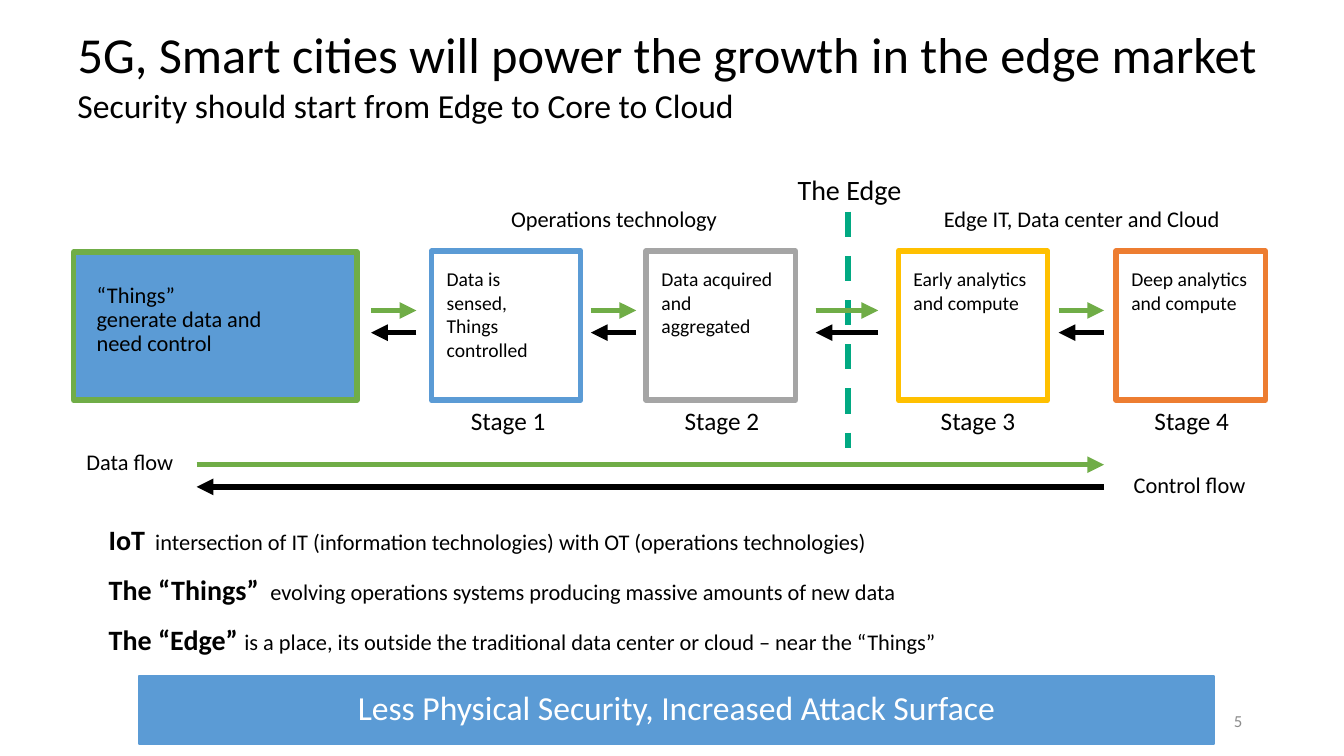
import pptx
import pptx.dml.color
import pptx.enum.dml
import pptx.enum.shapes
import pptx.enum.text
import pptx.oxml.ns
import pptx.util
import lxml.etree

PX = 9144
COLORS = {
    "text": "000000", "white": "FFFFFF", "muted": "8C8C8C", "blue": "5B9BD5",
    "green": "70AD47", "gray": "A5A5A5", "yellow": "FFC000", "orange": "ED7D31",
    "edge": "01A982",
}
ALIGN = pptx.enum.text.PP_ALIGN
ANCHOR = pptx.enum.text.MSO_ANCHOR


def px(*values):
    return [pptx.util.Emu(v * PX) for v in values]


def rgb(name):
    return pptx.dml.color.RGBColor.from_string(COLORS[name])


class Deck:
    font = "Calibri"

    def __init__(self, width, height):
        self.prs = pptx.Presentation()
        self.prs.slide_width, self.prs.slide_height = px(width, height)
        self.s = self.prs.slides.add_slide(self.prs.slide_layouts[5])

    def set_text(self, sp, paragraphs, size, color="text", align=ALIGN.LEFT,
                 anchor=ANCHOR.MIDDLE, insets=(10, 5), spacing=0.9, gap=0):
        tf = sp.text_frame
        tf.word_wrap = True
        tf.auto_size = pptx.enum.text.MSO_AUTO_SIZE.NONE
        tf.vertical_anchor = anchor
        tf.margin_left, tf.margin_top = px(*insets)
        tf.margin_right, tf.margin_bottom = px(*insets)
        for i, runs in enumerate(paragraphs):
            p = tf.add_paragraph() if i else tf.paragraphs[0]
            p.alignment = align
            p.line_spacing = spacing
            p.space_before = p.space_after = pptx.util.Pt(gap)
            if isinstance(runs, str):
                runs = [(runs, size, False)]
            for text, run_size, bold in runs:
                r = p.add_run()
                r.text = text
                r.font.name = self.font
                r.font.size = pptx.util.Pt(run_size)
                r.font.bold = bold
                r.font.color.rgb = rgb(color)

    def title(self, box, text, size):
        sp = self.s.shapes.title
        sp.left, sp.top, sp.width, sp.height = px(*box)
        self.set_text(sp, [text], size)

    def text(self, box, paragraphs, size, **style):
        self.set_text(self.s.shapes.add_textbox(*px(*box)), paragraphs, size, **style)

    def rect(self, box, fill, line, width=4):
        sp = self.s.shapes.add_shape(pptx.enum.shapes.MSO_SHAPE.RECTANGLE, *px(*box))
        sp.shadow.inherit = False
        sp.fill.solid()
        sp.fill.fore_color.rgb = rgb(fill)
        sp.line.color.rgb = rgb(line)
        sp.line.width = pptx.util.Pt(width)
        return sp

    def line(self, start, end, color, width=4, dashed=False, arrow=True):
        sp = self.s.shapes.add_connector(
            pptx.enum.shapes.MSO_CONNECTOR.STRAIGHT, *px(*start, *end))
        sp.line.color.rgb = rgb(color)
        sp.line.width = pptx.util.Pt(width)
        if dashed:
            sp.line.dash_style = pptx.enum.dml.MSO_LINE.DASH
        qn = pptx.oxml.ns.qn
        spPr = sp._element.spPr
        if arrow:
            lxml.etree.SubElement(spPr.find(qn("a:ln")), qn("a:tailEnd"), type="triangle")
        lxml.etree.SubElement(spPr, qn("a:effectLst"))

    def flow(self, left, right, y):
        self.line((left, y), (right, y), "green")
        self.line((right, y + 22), (left, y + 22), "text")


def main():
    d = Deck(1333, 750)
    d.title((67, 34, 1200, 45), "5G, Smart cities will power the growth in the edge market", 36)
    d.text((67, 84, 1200, 42), ["Security should start from Edge to Core to Cloud"], 24,
           anchor=ANCHOR.TOP)
    d.text((942, 695, 300, 40), ["5"], 12, color="muted", align=ALIGN.RIGHT, spacing=1)

    d.rect((73, 250, 281, 147), "blue", "green")
    d.text((86, 298, 228, 39), ["“Things”", "generate data and need control"], 16)

    d.line((841, 210), (841, 444), "edge", 4.5, dashed=True, arrow=False)
    d.text((762, 174, 161, 31), ["The Edge"], 20, align=ALIGN.CENTER)
    for left, width, label in [(444, 330, "Operations technology"),
                               (891, 364, "Edge IT, Data center and Cloud")]:
        d.text((left, 199, width, 39), [label], 16, align=ALIGN.CENTER)

    stages = [
        (428, 454, 141, "blue", ["Data is sensed,", "Things controlled"]),
        (641, 666, 143, "gray", ["Data acquired and aggregated"]),
        (891, 920, 148, "yellow", ["Early analytics", "and compute"]),
        (1107, 1132, 148, "orange", ["Deep analytics", "and compute"]),
    ]
    for number, (left, label_left, text_width, color, lines) in enumerate(stages, 1):
        d.rect((left, 249, 148, 148), "white", color)
        d.text((left, 260, text_width, 104), lines, 14, anchor=ANCHOR.TOP,
               insets=(15, 5), spacing=1)
        d.text((label_left, 406, 100, 33), [f"Stage {number}"], 18, align=ALIGN.CENTER,
               anchor=ANCHOR.TOP, insets=(0, 0))

    for left, right in [(368, 413), (586, 631), (809, 871), (1050, 1095)]:
        d.flow(left, right, 308)
    d.flow(195, 1095, 461)
    d.text((76, 440, 280, 37), ["Data flow"], 16, anchor=ANCHOR.TOP, spacing=1)
    d.text((1067, 463, 178, 37), ["Control flow"], 16, align=ALIGN.RIGHT,
           anchor=ANCHOR.TOP, spacing=1)

    definitions = [
        ("IoT", "  intersection of IT (information technologies) with OT (operations technologies)"),
        ("The “Things” ", " evolving operations systems producing massive amounts of new data"),
        ("The “Edge” ", "is a place, its outside the traditional data center or cloud – near the “Things”"),
    ]
    d.text((98, 513, 1147, 188),
           [[(term, 20, True), (meaning, 16, False)] for term, meaning in definitions],
           16, anchor=ANCHOR.TOP, spacing=1, gap=6)

    banner = d.rect((138, 671, 1066, 67), "blue", "blue", 1.5)
    d.set_text(banner, ["Less Physical Security, Increased Attack Surface"], 24,
               color="white", align=ALIGN.CENTER)
    d.prs.save("out.pptx")


if __name__ == "__main__":
    main()
